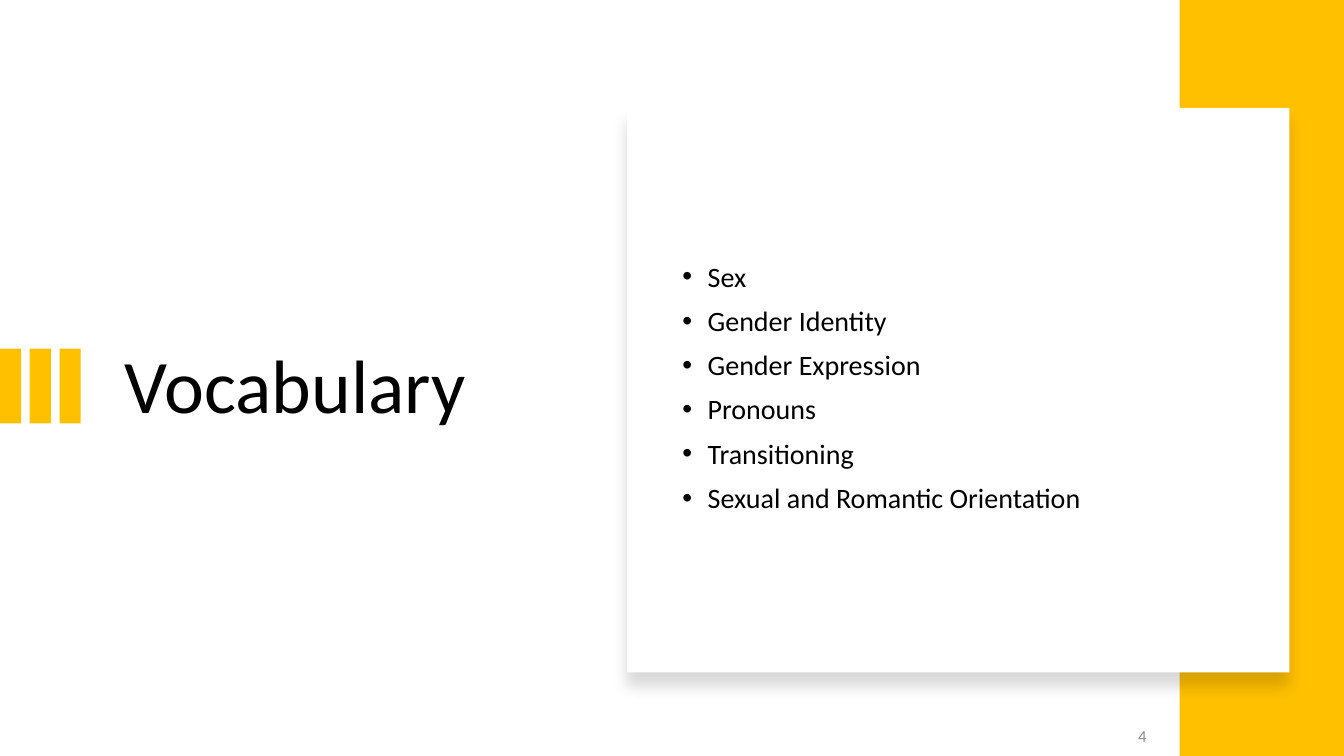
from lxml import etree
from pptx import Presentation
from pptx.dml.color import RGBColor
from pptx.enum.shapes import MSO_SHAPE
from pptx.enum.text import MSO_ANCHOR, PP_ALIGN
from pptx.oxml.ns import qn
from pptx.util import Inches, Pt

TITLE = "Vocabulary"
TERMS = [
    "Sex",
    "Gender Identity",
    "Gender Expression",
    "Pronouns",
    "Transitioning",
    "Sexual and Romantic Orientation",
]
PAGE_NUMBER = "4"

THEME = {
    "font": "Calibri",
    "accent": "FFC000",
    "card": "FFFFFF",
    "text": "000000",
    "muted": "8C8C8C",
    "title_size": 54,
    "term_size": 20,
    "number_size": 12,
}
RECTANGLE = MSO_SHAPE.RECTANGLE
MIDDLE = MSO_ANCHOR.MIDDLE
LEFT, RIGHT = PP_ALIGN.LEFT, PP_ALIGN.RIGHT

SLIDE_WIDTH, SLIDE_HEIGHT = 13.33, 7.5
BAND_WIDTH = 1.63
BAR_COUNT, BAR_PITCH = 3, 0.295
BAR_TOP, BAR_WIDTH, BAR_HEIGHT = 3.46, 0.21, 0.74
CONTENT_TOP, CONTENT_HEIGHT = 1.46, 4.79
BULLET_INDENT = 0.25


def add_block(page, left, top, width, height, color):
    block = page.shapes.add_shape(
        RECTANGLE, Inches(left), Inches(top), Inches(width), Inches(height))
    block.shadow.inherit = False
    block.fill.solid()
    block.fill.fore_color.rgb = RGBColor.from_string(color)
    block.line.fill.background()
    return block


def add_drop_shadow(shape):
    effects = shape._element.spPr.find(qn("a:effectLst"))
    shadow = etree.SubElement(
        effects, qn("a:outerShdw"), blurRad=str(Pt(11)), dist=str(Pt(10)),
        dir="5400000", algn="t", rotWithShape="0")
    color = etree.SubElement(shadow, qn("a:srgbClr"), val="000000")
    etree.SubElement(color, qn("a:alpha"), val="15000")


def add_bullet(para):
    properties = para._p.get_or_add_pPr()
    properties.set("marL", str(Inches(BULLET_INDENT)))
    properties.set("indent", str(-Inches(BULLET_INDENT)))
    etree.SubElement(properties, qn("a:buFont"), typeface="Arial")
    etree.SubElement(properties, qn("a:buChar"), char="•")


def add_text(page, left, top, width, height, lines, size, color,
             align=LEFT, line_spacing=0.9, bulleted=False):
    box = page.shapes.add_textbox(
        Inches(left), Inches(top), Inches(width), Inches(height))
    frame = box.text_frame
    frame.word_wrap = True
    frame.vertical_anchor = MIDDLE
    frame.text = "\n".join(lines)
    for index, para in enumerate(frame.paragraphs):
        if bulleted:
            add_bullet(para)
        para.alignment = align
        para.line_spacing = line_spacing
        para.space_before = Pt(10 if index else 0)
        for span in para.runs:
            span.font.name = THEME["font"]
            span.font.size = Pt(size)
            span.font.color.rgb = RGBColor.from_string(color)


def main():
    deck = Presentation()
    deck.slide_width = Inches(SLIDE_WIDTH)
    deck.slide_height = Inches(SLIDE_HEIGHT)
    page = deck.slides.add_slide(deck.slide_layouts[6])

    add_text(page, 1.14, CONTENT_TOP, 4.26, CONTENT_HEIGHT, [TITLE],
             THEME["title_size"], THEME["text"])
    for index in range(BAR_COUNT):
        add_block(page, index * BAR_PITCH, BAR_TOP, BAR_WIDTH, BAR_HEIGHT,
                  THEME["accent"])
    add_block(page, SLIDE_WIDTH - BAND_WIDTH, 0, BAND_WIDTH, SLIDE_HEIGHT,
              THEME["accent"])
    card = add_block(page, 6.22, 1.07, 6.57, 5.6, THEME["card"])
    add_drop_shadow(card)
    add_text(page, 6.67, CONTENT_TOP, 5.75, CONTENT_HEIGHT, TERMS,
             THEME["term_size"], THEME["text"], bulleted=True)
    add_text(page, 10.37, 7.1, 1.1, 0.4, [PAGE_NUMBER],
             THEME["number_size"], THEME["muted"], align=RIGHT,
             line_spacing=1.0)

    deck.save("out.pptx")


if __name__ == "__main__":
    main()
